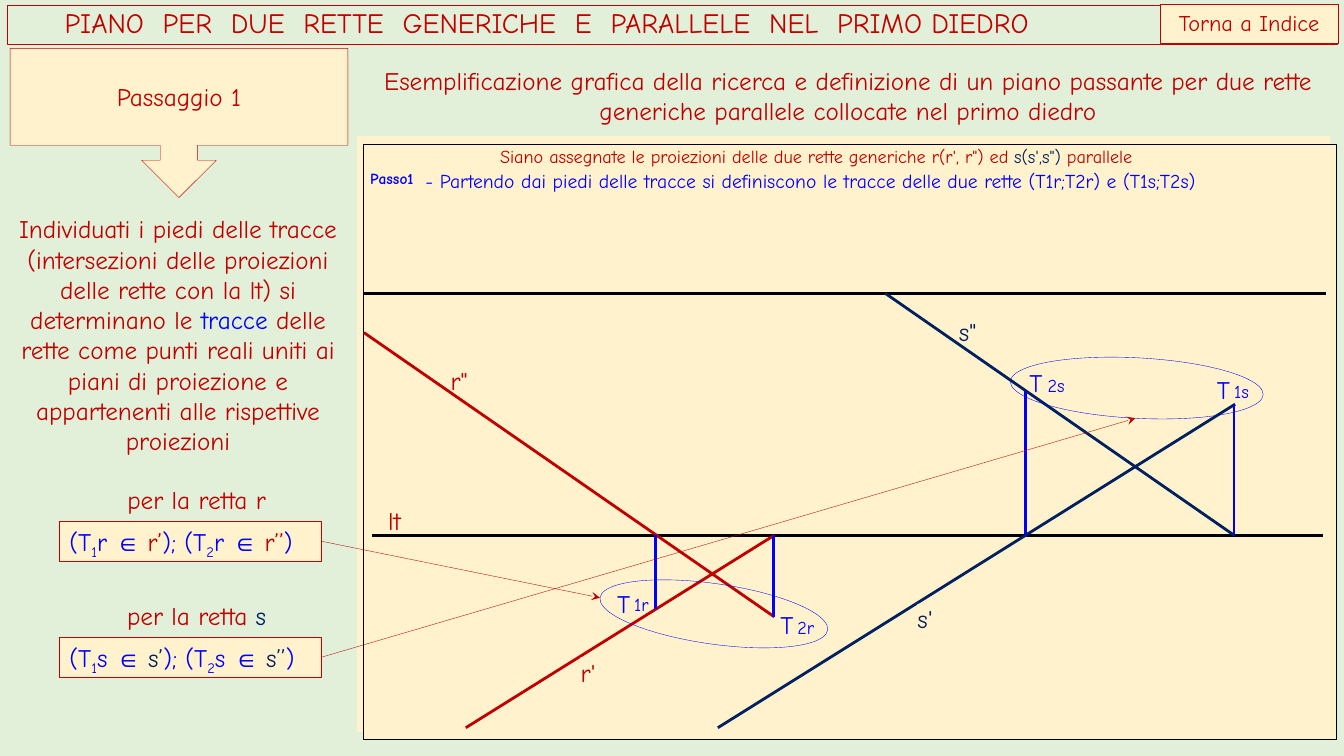
from dataclasses import dataclass

from lxml import etree
from pptx import Presentation
from pptx import util as u
from pptx.dml.color import RGBColor
from pptx.enum import shapes, text
from pptx.oxml.ns import qn

MS = shapes.MSO_SHAPE
LEFT, CENTER = text.PP_ALIGN.LEFT, text.PP_ALIGN.CENTER
TOP, MIDDLE = text.MSO_ANCHOR.TOP, text.MSO_ANCHOR.MIDDLE


@dataclass(frozen=True)
class Theme:
    font: str = "Comic Neue"
    symbol_font: str = "Arial"
    background: str = "E2F0D9"
    cream: str = "FFF2CC"
    red: str = "C00000"
    navy: str = "002060"
    blue: str = "0000FF"
    black: str = "000000"
    title: int = 20
    body: int = 18
    button: int = 16
    step: int = 14
    small: int = 13
    tag: int = 11
    hairline: float = 0
    thin: float = 0.25
    border: float = 0.75


T = Theme()


class Board:
    """Draws on one slide with a grid of 10 columns and 10 rows to the inch."""

    CELL = u.Inches(0.1)

    def __init__(self, prs, theme):
        self.t = theme
        self.slide = prs.slides.add_slide(prs.slide_layouts[6])
        fill = self.slide.background.fill
        fill.solid()
        fill.fore_color.rgb = RGBColor.from_string(theme.background)

    def grid(self, *cells):
        return [round(c * self.CELL) for c in cells]

    def shape(self, box, kind=MS.RECTANGLE, fill=None, line=None, width=0, angle=0):
        sp = self.slide.shapes.add_shape(kind, *self.grid(*box))
        sp.shadow.inherit = False
        sp.rotation = angle
        if fill:
            sp.fill.solid()
            sp.fill.fore_color.rgb = RGBColor.from_string(fill)
        else:
            sp.fill.background()
        if line:
            sp.line.color.rgb = RGBColor.from_string(line)
            sp.line.width = u.Pt(width)
        else:
            sp.line.fill.background()
        return sp

    def put_text(self, sp, runs, size, align=LEFT, anchor=TOP, bold=False):
        """Fill sp with runs of (text, colour) or (text, colour, style)."""
        tf = sp.text_frame
        tf.word_wrap = True
        tf.vertical_anchor = anchor
        p = tf.paragraphs[0]
        p.alignment = align
        p.font.name, p.font.size, p.font.bold = self.t.font, u.Pt(size), bold
        for words, colour, *style in runs:
            r = p.add_run()
            r.text = words
            r.font.color.rgb = RGBColor.from_string(colour)
            if "sub" in style:
                r._r.get_or_add_rPr().set("baseline", "-25000")
            if "symbol" in style:
                r.font.name, r.font.bold = self.t.symbol_font, True
        return tf

    def caption(self, box, runs, size=T.body):
        """Centred text without a frame."""
        self.put_text(self.slide.shapes.add_textbox(*self.grid(*box)), runs, size, CENTER)

    def label(self, box, runs, size=T.body, bold=False):
        """Tight cream label that sits on the drawing."""
        tf = self.put_text(self.shape(box, fill=self.t.cream), runs, size, bold=bold)
        tf.margin_left = tf.margin_right = tf.margin_top = tf.margin_bottom = 0
        tf.word_wrap = False
        tf.auto_size = text.MSO_AUTO_SIZE.SHAPE_TO_FIT_TEXT

    def trace(self, letter_box, index_box, index):
        self.label(letter_box, [("T", self.t.blue)])
        self.label(index_box, [(index, self.t.blue)], self.t.small)

    def line(self, start, end, colour, width=T.hairline, arrow=False):
        c = self.slide.shapes.add_connector(
            shapes.MSO_CONNECTOR.STRAIGHT, *self.grid(*start, *end))
        c.line.color.rgb = RGBColor.from_string(colour)
        c.line.width = u.Pt(width)
        if arrow:
            etree.SubElement(c.line._get_or_add_ln(), qn("a:tailEnd"), type="stealth")
        etree.SubElement(c._element.spPr, qn("a:effectLst"))

    def membership(self, box, name, colour):
        """Framed statement that both traces belong to the projections of a line."""
        blue = self.t.blue
        runs = []
        for lead, index, prime in (("(T", "1", "’"), ("); (T", "2", "’’")):
            runs += [(lead, blue), (index, blue, "sub"), (name + " ", blue),
                     ("∈ ", blue, "symbol"), (name + prime, colour)]
        sp = self.shape(box, fill=self.t.cream, line=self.t.red, width=self.t.border)
        self.put_text(sp, runs + [(")", blue)], self.t.body)


def draw_header(b):
    sp = b.shape((0.7, 0.5, 131.9, 3.9), line=T.red, width=T.thin)
    title = "PIANO  PER  DUE  RETTE  GENERICHE  E  PARALLELE  NEL  PRIMO DIEDRO"
    tf = b.put_text(sp, [(title, T.red)], T.title, anchor=MIDDLE)
    tf.margin_left = u.Inches(0.57)
    tf.paragraphs[0].line_spacing = 0.9
    sp = b.shape((1, 4.8, 33.5, 14.8), MS.DOWN_ARROW_CALLOUT, T.cream, T.red, T.thin)
    b.put_text(sp, [("Passaggio 1", T.red)], T.body, CENTER, MIDDLE)
    sp = b.shape((115.1, 0.4, 17.6, 3.9), fill=T.cream, line=T.red, width=T.thin)
    b.put_text(sp, [("Torna a Indice", T.red)], T.button, CENTER)
    b.caption((36.1, 6, 96, 7.1), [(
        "Esemplificazione grafica della ricerca e definizione di un piano passante "
        "per due rette generiche parallele collocate nel primo diedro", T.red)])


def draw_projections(b):
    b.shape((35.4, 13.5, 96.5, 59.1), fill=T.cream)
    b.shape((36.1, 14.3, 96.5, 59.1), fill=T.cream, line=T.black, width=T.hairline)
    b.label((38.5, 50.1, 1.9, 3), [("lt", T.red)])
    for start, end, colour in (
            ((36.9, 53.1), (131.2, 53.1), T.black),
            ((131.5, 29.1), (36.1, 29.1), T.black),
            ((36.1, 33), (76.8, 61.2), T.red),
            ((46.2, 72.2), (76.8, 53.1), T.red),
            ((87.8, 29.1), (122.4, 53.1), T.navy),
            ((71.2, 72.2), (122.5, 40.1), T.navy)):
        b.line(start, end, colour)
    for x, y, name, colour in (
            (44.7, 36.2, 'r"', T.red), (57.6, 65.2, "r'", T.red),
            (95.1, 31.4, 's"', T.navy), (91, 59.9, "s'", T.navy)):
        b.label((x, y, 2.3, 2.4), [(name, colour)])
    b.label((49.6, 14.4, 70.4, 2.2), [
        ("Siano assegnate le proiezioni delle due rette generiche r(r', r\") ed ", T.red),
        ("s(s',s\") ", T.navy), ("parallele", T.red)], T.small)
    b.label((36.7, 16.8, 4.9, 1.9), [("Passo1", T.blue)], T.tag, bold=True)
    b.label((42.2, 16.8, 86.3, 2.4), [(
        "- Partendo dai piedi delle tracce si definiscono le tracce delle due rette "
        "(T1r;T2r) e (T1s;T2s)", T.blue)], T.step)


def draw_traces(b):
    b.trace((77.4, 60.4, 2.8, 2.4), (79.1, 61.1, 2, 2), "2r")
    b.trace((102.1, 36.4, 2.8, 2.4), (103.9, 37.1, 2.4, 2), "2s")
    b.trace((120.7, 37.1, 2.8, 2.4), (122.4, 37.7, 2.7, 1.6), "1s")
    for x, y in ((101.7, 38.8), (76.7, 61.2), (65, 60.4), (122.4, 40.1)):
        b.line((x, 53.1), (x, y), T.blue)
    b.trace((61.2, 58.4, 2.8, 1.6), (62.9, 58.9, 1.7, 1.5), "1r")


def draw_explanation(b):
    b.caption((0.9, 20.7, 33.5, 25.2), [
        ("Individuati i piedi delle tracce (intersezioni delle proiezioni delle rette "
         "con la lt) si determinano le ", T.red), ("tracce", T.blue),
        (" delle rette come punti reali uniti ai piani di proiezione e appartenenti "
         "alle rispettive proiezioni", T.red)])
    for y, name, colour, ellipse, angle, tip in (
            (47.6, "r", T.red, (59.4, 57.9, 22.8, 6), 8.1, (59.5, 59.3)),
            (59.1, "s", T.navy, (100.2, 35.5, 25.1, 6), 3, (112.6, 41.5))):
        b.caption((1.3, y, 36.4, 4), [("per la retta ", T.red), (name, colour)])
        b.membership((5.9, y + 4.1, 26, 4), name, colour)
        b.shape(ellipse, MS.OVAL, line=T.blue, width=T.thin, angle=angle)
        b.line((31.9, y + 6.1), tip, T.red, T.thin, arrow=True)


def main():
    prs = Presentation()
    prs.slide_width, prs.slide_height = u.Inches(13.33), u.Inches(7.5)
    b = Board(prs, T)
    draw_header(b)
    draw_projections(b)
    draw_traces(b)
    draw_explanation(b)
    prs.save("out.pptx")


if __name__ == "__main__":
    main()
